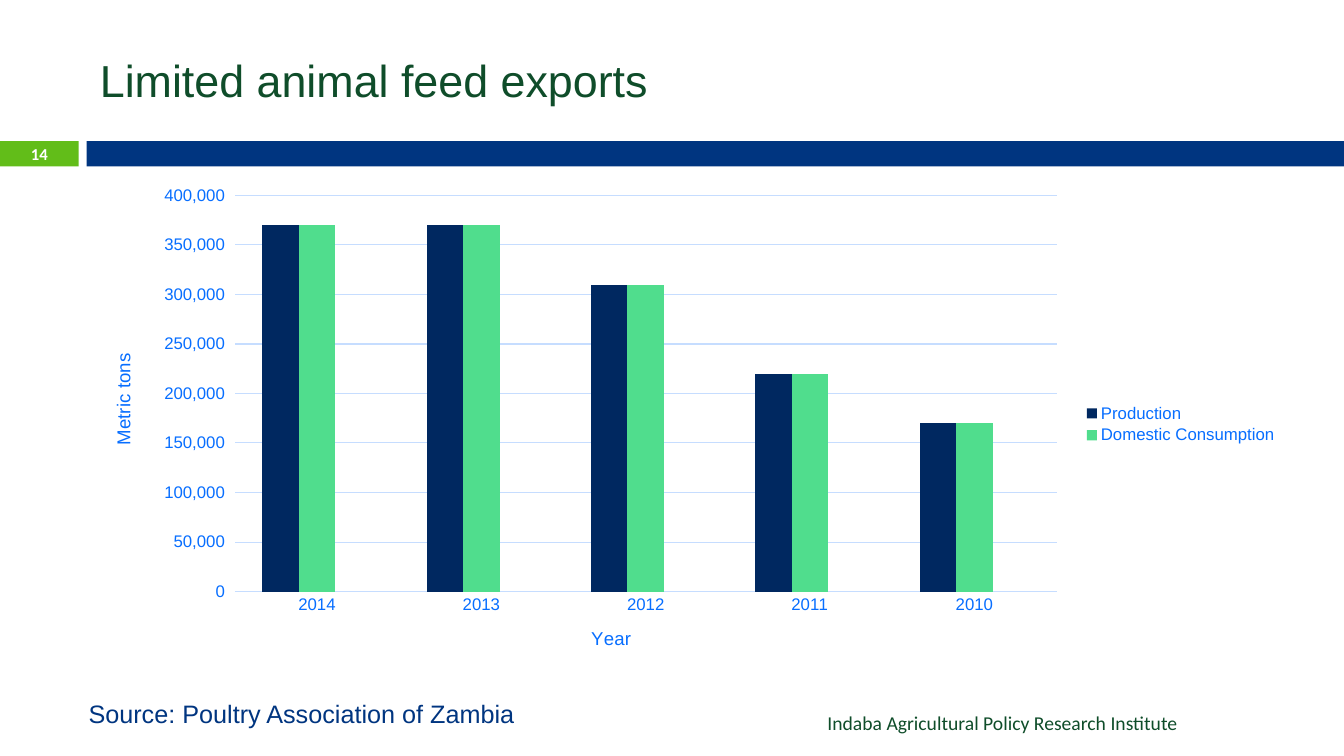
from lxml import etree
from pptx import Presentation
from pptx.chart.data import CategoryChartData
from pptx.dml.color import RGBColor
from pptx.enum.chart import XL_CHART_TYPE as ChartType, XL_LEGEND_POSITION as LegendPos, XL_TICK_MARK as Tick
from pptx.enum.shapes import MSO_SHAPE as Shape
from pptx.enum.text import MSO_ANCHOR as Anchor, PP_ALIGN as Align
from pptx.oxml.ns import qn
from pptx.util import Inches, Pt

NAVY = RGBColor(0x00, 0x35, 0x80)
GREEN = RGBColor(0x62, 0xBD, 0x19)
FOREST = RGBColor(0x0F, 0x4D, 0x2A)
WHITE = RGBColor(0xFF, 0xFF, 0xFF)
BLUE = RGBColor(0x07, 0x6E, 0xFF)
PALE = RGBColor(0xC6, 0xDD, 0xFF)
DARK = RGBColor(0x00, 0x28, 0x60)
MINT = RGBColor(0x50, 0xDD, 0x8D)
OLIVE = RGBColor(0xA5, 0xAB, 0x81)

TITLE = "Limited animal feed exports"
YEARS = ["2014", "2013", "2012", "2011", "2010"]
FEED = [
    ("Production", [370000, 370000, 310000, 220000, 170000], DARK),
    ("Domestic Consumption", [370000, 370000, 310000, 220000, 170000], MINT),
    ("Series 3", [None] * len(YEARS), OLIVE),
]
EMPTY_SERIES = 2
BANDS = [((0, 1.4, 0.78, 0.25), GREEN), ((0.86, 1.4, 12.47, 0.25), NAVY)]
LABELS = [
    ("Indaba Agricultural Policy Research Institute", (6.11, 7, 5.67, 0.34),
     "Calibri", 14, FOREST, False, Align.RIGHT, Anchor.TOP),
    ("14", (0, 1.39, 0.78, 0.27),
     "Calibri", 11.9, WHITE, True, Align.CENTER, Anchor.MIDDLE),
    ("Source: Poultry Association of Zambia", (0.78, 6.88, 6.26, 0.4),
     "Arial", 18, NAVY, False, Align.LEFT, Anchor.TOP),
]
TITLE_BOX = (0.89, 0.25, 11.89, 1.08)
CHART_BOX = (0.89, 1.75, 11.89, 4.92)
PLOT_BOX = (2.33, 1.94, 8.15, 3.93)
YEAR_AT = (5.83, 6.18)
TONS_AT = (1.07, 3.47)


def box(lengths):
    return [Inches(length) for length in lengths]


def style(font, name, size, color, bold=False):
    font.name, font.size, font.bold = name, Pt(size), bold
    font.color.rgb = color


def write(frame, text, name, size, color, bold, align, anchor):
    frame.word_wrap = True
    frame.vertical_anchor = anchor
    paragraph = frame.paragraphs[0]
    paragraph.alignment = align
    run = paragraph.add_run()
    run.text = text
    style(run.font, name, size, color, bold)


def place(element, lengths, inner=False):
    for old in element.findall(qn("c:layout")):
        element.remove(old)
    layout = etree.Element(qn("c:layout"))
    manual = etree.SubElement(layout, qn("c:manualLayout"))
    left, top, width, height = CHART_BOX
    values = [(lengths[0] - left) / width, (lengths[1] - top) / height]
    values += [part / whole for part, whole in zip(lengths[2:], (width, height))]
    settings = [("layoutTarget", "inner")] if inner else []
    settings += [("xMode", "edge"), ("yMode", "edge")]
    settings += [(key, f"{value:.4f}") for key, value in zip("xywh", values)]
    for key, value in settings:
        etree.SubElement(manual, qn(f"c:{key}")).set("val", value)
    text = element.find(qn("c:tx"))
    element.insert(0 if text is None else 1, layout)


def name_axis(axis, text, spot):
    run = axis.axis_title.text_frame.paragraphs[0].add_run()
    run.text = text
    style(run.font, "Arial", 13.3, BLUE)
    place(axis.axis_title._element, spot)
    style(axis.tick_labels.font, "Arial", 12, BLUE)


def draw_chart(slide):
    feed_data = CategoryChartData(number_format="#,##0")
    feed_data.categories = YEARS
    for name, tons, _ in FEED:
        feed_data.add_series(name, tons)
    chart = slide.shapes.add_chart(
        ChartType.COLUMN_CLUSTERED, *box(CHART_BOX), feed_data).chart
    style(chart.font, "Arial", 10, NAVY)
    chart.has_title = False

    columns = chart.plots[0]
    columns.gap_width, columns.overlap = 150, 0
    columns.vary_by_categories = False
    for series, (_, _, color) in zip(columns.series, FEED):
        series.format.fill.solid()
        series.format.fill.fore_color.rgb = color
    place(chart._chartSpace.chart.plotArea, PLOT_BOX, inner=True)

    years, tons = chart.category_axis, chart.value_axis
    name_axis(years, "Year", YEAR_AT)
    name_axis(tons, "Metric tons", TONS_AT)
    years.major_tick_mark = Tick.NONE
    tons.major_tick_mark = Tick.OUTSIDE
    tons.minimum_scale, tons.maximum_scale, tons.major_unit = 0, 400000, 50000
    tons.tick_labels.number_format = "#,##0"
    tons.tick_labels.number_format_is_linked = False
    tons.format.line.fill.background()
    for line in (years.format.line, tons.major_gridlines.format.line):
        line.color.rgb, line.width = PALE, Pt(0.75)

    chart.has_legend = True
    legend = chart.legend
    legend.position, legend.include_in_layout = LegendPos.RIGHT, False
    style(legend.font, "Arial", 12, BLUE)
    entry = etree.Element(qn("c:legendEntry"))
    etree.SubElement(entry, qn("c:idx")).set("val", str(EMPTY_SERIES))
    etree.SubElement(entry, qn("c:delete")).set("val", "1")
    legend._element.insert(1, entry)


def main():
    deck = Presentation()
    deck.slide_width, deck.slide_height = Inches(13.33), Inches(7.5)
    slide = deck.slides.add_slide(deck.slide_layouts[5])

    title = slide.shapes.title
    title.left, title.top, title.width, title.height = box(TITLE_BOX)
    write(title.text_frame, TITLE, "Arial", 32, FOREST, False, Align.LEFT, Anchor.MIDDLE)

    for lengths, color in BANDS:
        band = slide.shapes.add_shape(Shape.RECTANGLE, *box(lengths))
        band.shadow.inherit = False
        band.fill.solid()
        band.fill.fore_color.rgb = color
        band.line.fill.background()

    for text, lengths, *look in LABELS:
        label = slide.shapes.add_textbox(*box(lengths))
        write(label.text_frame, text, *look)

    draw_chart(slide)
    deck.save("out.pptx")


if __name__ == "__main__":
    main()
